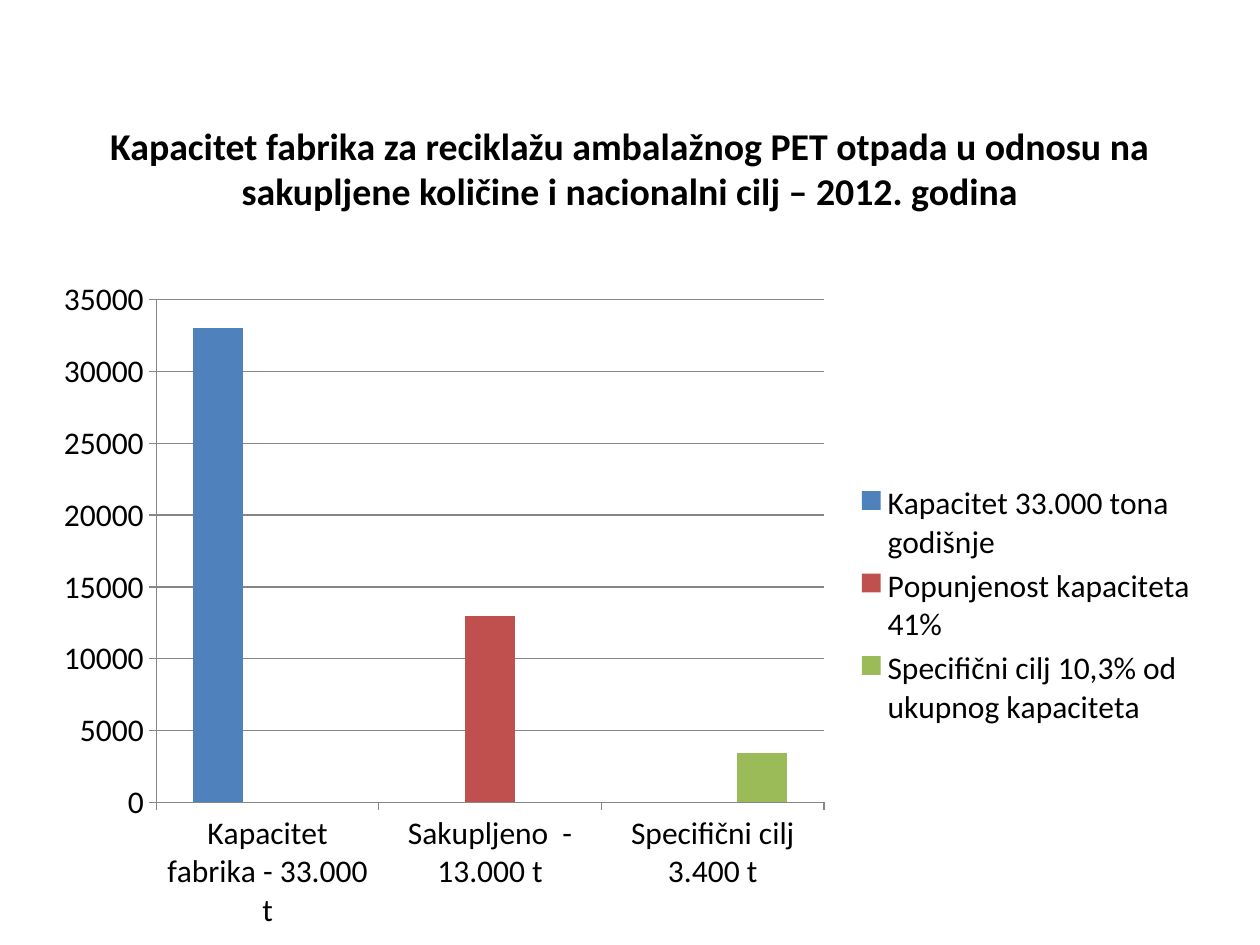
from lxml import etree
from pptx import Presentation
from pptx import util as u
from pptx.chart import data as cd
from pptx.dml.color import RGBColor
from pptx.enum import chart as ch, text
from pptx.oxml import ns

BLACK = RGBColor(0x00, 0x00, 0x00)
GRAY = RGBColor(0x86, 0x86, 0x86)
BLUE = RGBColor(0x4F, 0x81, 0xBD)
RED = RGBColor(0xC0, 0x50, 0x4D)
GREEN = RGBColor(0x9B, 0xBB, 0x59)

TITLE = ("Kapacitet fabrika za reciklažu ambalažnog PET otpada u odnosu na "
         "sakupljene količine i nacionalni cilj – 2012. godina")
CATEGORIES = ["Kapacitet fabrika - 33.000 t", "Sakupljeno  - 13.000 t",
              "Specifični cilj 3.400 t"]
SERIES = [
    ("Kapacitet 33.000 tona godišnje", 33000, BLUE),
    ("Popunjenost kapaciteta 41%", 13000, RED),
    ("Specifični cilj 10,3% od ukupnog kapaciteta", 3400, GREEN),
]


class Deck:
    """Holds the text style and the current slide."""

    def __init__(self, slide, font="Calibri", color=BLACK):
        self.s, self.font, self.color = slide, font, color

    def style(self, f, size, bold=False):
        f.name, f.size, f.bold = self.font, u.Pt(size), bold
        f.color.rgb = self.color

    def title(self, words, box, size):
        tf = self.s.shapes.add_textbox(*map(u.Inches, box)).text_frame
        tf.word_wrap = True
        tf.vertical_anchor = text.MSO_ANCHOR.MIDDLE
        tf.margin_bottom = u.Inches(0.36)
        p = tf.paragraphs[0]
        p.text = words
        p.alignment = text.PP_ALIGN.CENTER
        self.style(p.runs[0].font, size, True)

    def columns(self, categories, series, box, size, plot_area):
        data = cd.CategoryChartData()
        data.categories = categories
        for i, (name, value, _) in enumerate(series):
            data.add_series(name, [value if j == i else None for j in range(len(categories))])
        chart = self.s.shapes.add_chart(
            ch.XL_CHART_TYPE.COLUMN_CLUSTERED, *map(u.Inches, box), data).chart
        self.style(chart.font, size)
        chart.has_title = False
        chart.has_legend = True
        chart.legend.position = ch.XL_LEGEND_POSITION.RIGHT
        chart.legend.include_in_layout = False
        plot = chart.plots[0]
        plot.vary_by_categories = False
        plot.gap_width, plot.overlap = 150, 0
        for bars, (_, _, color) in zip(plot.series, series):
            bars.format.fill.solid()
            bars.format.fill.fore_color.rgb = color
        for axis in (chart.category_axis, chart.value_axis):
            axis.major_tick_mark = ch.XL_TICK_MARK.OUTSIDE
            axis.format.line.color.rgb = GRAY
        axis = chart.value_axis
        axis.minimum_scale, axis.maximum_scale, axis.major_unit = 0, 35000, 5000
        axis.has_major_gridlines = True
        axis.major_gridlines.format.line.color.rgb = GRAY
        self.place_plot(chart, plot_area)

    def place_plot(self, chart, fractions):
        area = chart.plots[0]._element.getparent()
        for old in area.findall(ns.qn("c:layout")):
            area.remove(old)
        layout = etree.Element(ns.qn("c:layout"))
        manual = etree.SubElement(layout, ns.qn("c:manualLayout"))
        settings = [("layoutTarget", "inner"), ("xMode", "edge"), ("yMode", "edge")]
        for tag, val in settings + list(zip("xywh", fractions)):
            etree.SubElement(manual, ns.qn("c:" + tag)).set("val", str(val))
        area.insert(0, layout)


def main():
    prs = Presentation()
    prs.slide_width, prs.slide_height = u.Inches(10), u.Inches(7.5)
    deck = Deck(prs.slides.add_slide(prs.slide_layouts[6]))
    deck.columns(CATEGORIES, SERIES, (0.31, 2.11, 9.3, 5.39), 18,
                 (0.1, 0.05, 0.57, 0.74))
    deck.title(TITLE, (0.5, 1.02, 9, 0.94), 21.6)
    prs.save("out.pptx")


if __name__ == "__main__":
    main()
